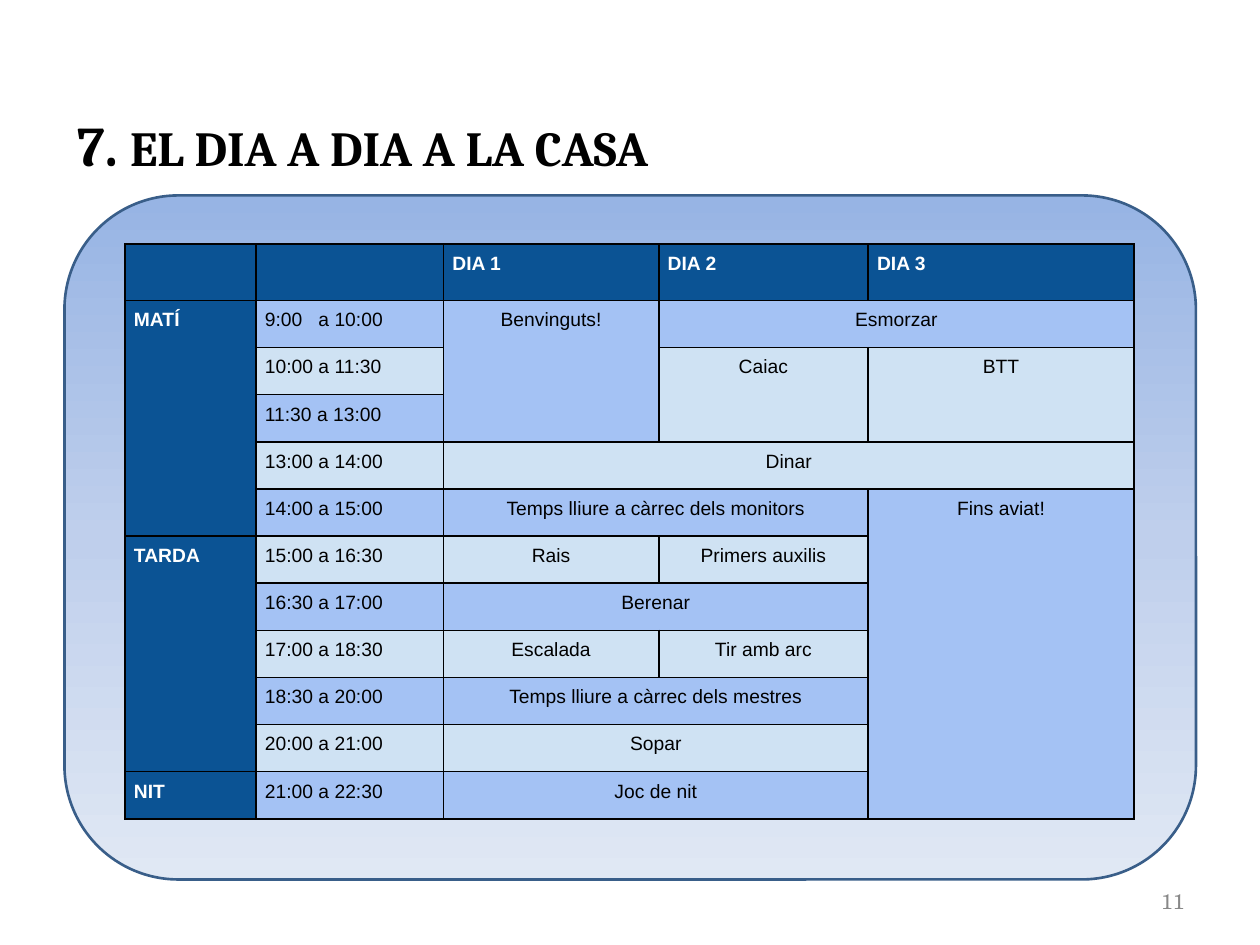
from copy import deepcopy

from lxml import etree
from pptx import Presentation
from pptx.dml.color import RGBColor
from pptx.enum import shapes, text
from pptx.oxml import ns
from pptx.util import Cm, Pt

HUES = {
    "ink": "000000", "white": "FFFFFF", "gray": "888888",
    "navy": "0B5394", "sky": "A4C2F4", "pale": "CFE2F3",
    "edge": "395E89", "top": "97B4E4", "mid": "BFCFEC", "low": "E0E8F4",
}
LEFT, MID, RIGHT = text.PP_ALIGN.LEFT, text.PP_ALIGN.CENTER, text.PP_ALIGN.RIGHT

# One list per row: part of the day, hours, then the three days
PLAN = [
    ["", "", "DIA 1", "DIA 2", "DIA 3"],
    ["MATÍ", "9:00\ta 10:00", "Benvinguts!", "Esmorzar", ""],
    ["", "10:00 a 11:30", "", "Caiac", "BTT"],
    ["", "11:30 a 13:00", "", "", ""],
    ["", "13:00 a 14:00", "Dinar", "", ""],
    ["", "14:00 a 15:00", "Temps lliure a càrrec dels monitors", "", "Fins aviat!"],
    ["TARDA", "15:00 a 16:30", "Rais", "Primers auxilis", ""],
    ["", "16:30 a 17:00", "Berenar", "", ""],
    ["", "17:00 a 18:30", "Escalada", "Tir amb arc", ""],
    ["", "18:30 a 20:00", "Temps lliure a càrrec dels mestres", "", ""],
    ["", "20:00 a 21:00", "Sopar", "", ""],
    ["NIT", "21:00 a 22:30", "Joc de nit", "", ""],
]
# First and last cell (row, column) of each merged block
SPANS = [
    ((1, 0), (5, 0)), ((6, 0), (10, 0)), ((1, 2), (3, 2)), ((1, 3), (1, 4)),
    ((2, 3), (3, 3)), ((2, 4), (3, 4)), ((4, 2), (4, 4)), ((5, 4), (11, 4)),
    *(((row, 2), (row, 3)) for row in (5, 7, 9, 10, 11)),
]


def hue(name):
    return RGBColor.from_string(HUES[name])


class Deck:
    def __init__(self):
        self.prs = Presentation()
        self.prs.slide_width, self.prs.slide_height = Cm(25.4), Cm(19.05)
        self.slide = self.prs.slides.add_slide(self.prs.slide_layouts[5])

    def style(self, par, face, size, color, bold=False, align=LEFT):
        par.alignment = align
        font = par.font
        font.name, font.size, font.bold = face, Pt(size), bold
        font.color.rgb = hue(color)

    def title(self, box, parts):
        shape = self.slide.shapes.title
        shape.left, shape.top, shape.width, shape.height = map(Cm, box)
        par = shape.text_frame.paragraphs[0]
        for words, size in parts:
            run = par.add_run()
            run.text, run.font.size = words, Pt(size)
        self.style(par, "Cambria", 28, "ink", True)

    def panel(self, box):
        shape = self.slide.shapes.add_shape(
            shapes.MSO_SHAPE.ROUNDED_RECTANGLE, *map(Cm, box))
        shape.shadow.inherit = False
        shape.line.color.rgb, shape.line.width = hue("edge"), Pt(1.5)
        shape.fill.gradient()
        shape.fill.gradient_angle = 270
        first = shape.fill.gradient_stops[0]._gs
        first.addnext(deepcopy(first))
        stops = zip(shape.fill.gradient_stops, ("top", "mid", "low"), (0, 0.5, 1))
        for stop, name, place in stops:
            stop.color.rgb, stop.position = hue(name), place

    def label(self, box, words):
        frame = self.slide.shapes.add_textbox(*map(Cm, box)).text_frame
        frame.word_wrap = True
        frame.vertical_anchor = text.MSO_ANCHOR.MIDDLE
        frame.text = words
        self.style(frame.paragraphs[0], "TeX Gyre Schola", 12, "gray", align=RIGHT)

    def border(self, cell):
        props = cell._tc.get_or_add_tcPr()
        for side in ("lnL", "lnR", "lnT", "lnB"):
            line = etree.SubElement(props, ns.qn(f"a:{side}"), w=str(Pt(1)))
            fill = etree.SubElement(line, ns.qn("a:solidFill"))
            etree.SubElement(fill, ns.qn("a:srgbClr"), val=HUES["ink"])

    def tab(self, par, place):
        tabs = etree.SubElement(par._p.get_or_add_pPr(), ns.qn("a:tabLst"))
        etree.SubElement(tabs, ns.qn("a:tab"), pos=str(Cm(place)), algn="l")

    def cell(self, cell, words, row, col):
        head = row == 0 or col == 0
        self.border(cell)
        cell.fill.solid()
        cell.fill.fore_color.rgb = hue("navy" if head else "sky" if row % 2 else "pale")
        cell.margin_left = cell.margin_right = Cm(0.18)
        cell.margin_top = cell.margin_bottom = Cm(0.18)
        if words:
            cell.text = words
            par = cell.text_frame.paragraphs[0]
            if "\t" in words:
                self.tab(par, 1.08)
            self.style(par, "Arial", 11, "white" if head else "ink", head,
                       LEFT if head or col == 1 else MID)

    def table(self, left, top, widths, heights, rows, spans):
        grid = self.slide.shapes.add_table(
            len(rows), len(widths), Cm(left), Cm(top),
            Cm(sum(widths)), Cm(sum(heights))).table
        grid.first_row = grid.horz_banding = False
        for col, width in zip(grid.columns, widths):
            col.width = Cm(width)
        for row, height in zip(grid.rows, heights):
            row.height = Cm(height)
        for r, line in enumerate(rows):
            for c, words in enumerate(line):
                self.cell(grid.cell(r, c), words, r, c)
        for start, end in spans:
            grid.cell(*start).merge(grid.cell(*end))


def main():
    deck = Deck()
    # Heading and background panel
    deck.title((1.3, 2.13, 22.86, 1.57), [("7. ", 32), ("EL DIA A DIA A LA CASA", 28)])
    deck.panel((1.3, 3.94, 22.81, 13.79))
    # Timetable
    deck.table(2.52, 4.92, [2.64, 3.78, 4.34, 4.22, 5.36],
               [1.07] + [0.95] * 11, PLAN, SPANS)
    # Page number
    deck.label((18.21, 17.65, 5.92, 1.02), "11")
    deck.prs.save("out.pptx")


if __name__ == "__main__":
    main()
